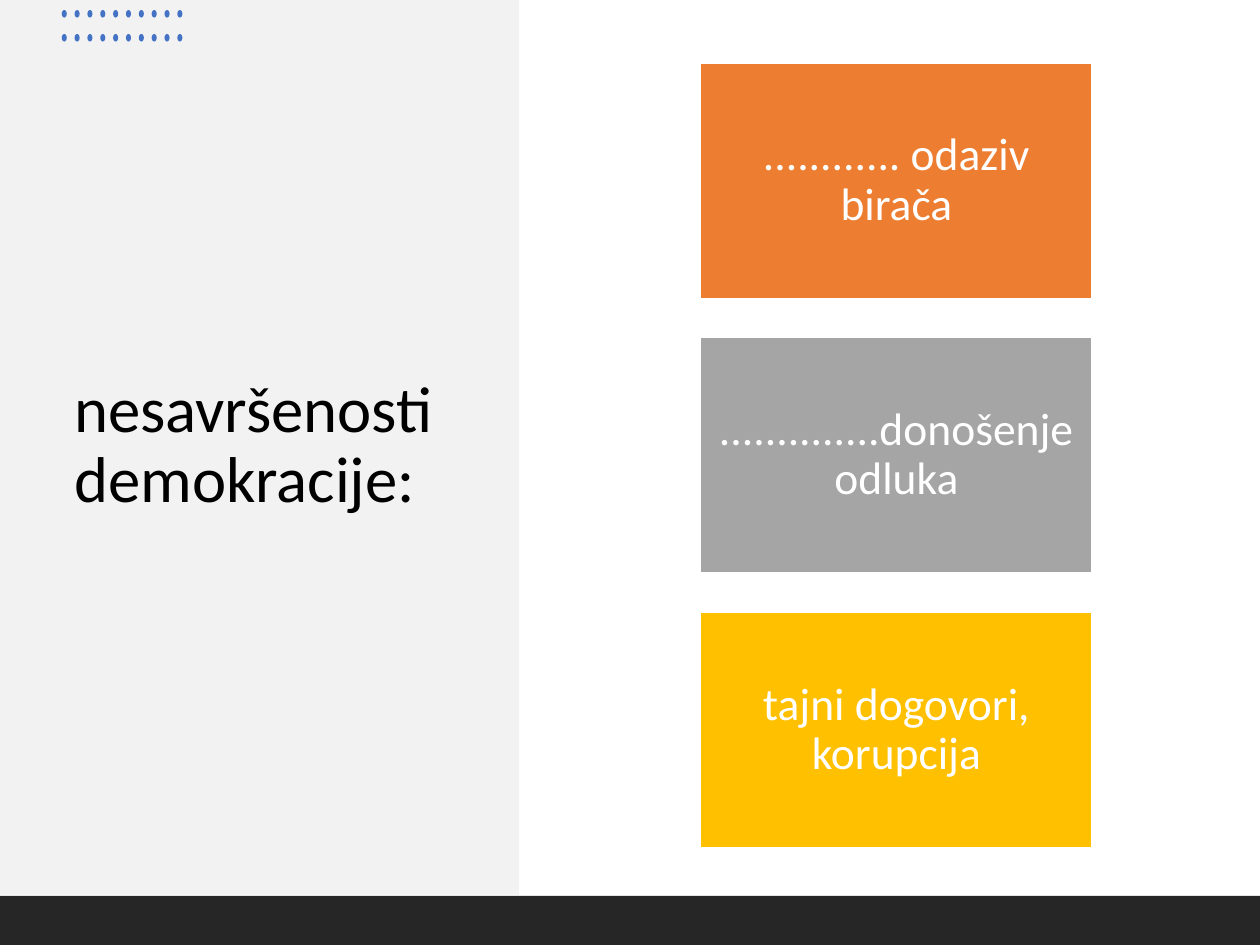
from pptx import Presentation
from pptx.dml.color import RGBColor
from pptx.enum.shapes import MSO_SHAPE
from pptx.enum.text import MSO_ANCHOR, MSO_AUTO_SIZE, PP_ALIGN
from pptx.util import Inches, Pt

TITLE = "nesavršenosti demokracije:"
CARDS = [
    ("............ odaziv birača", "ED7D31"),
    ("..............donošenje odluka", "A5A5A5"),
    ("tajni dogovori, korupcija", "FFC000"),
]
THEME = {
    "font": "Calibri",
    "title_size": 37,
    "card_size": 26,
    "title_color": "000000",
    "white": "FFFFFF",
    "panel": "F2F2F2",
    "footer": "262626",
    "dot": "4472C4",
}
TITLE_BOX = (0.49, 1.32, 3.18, 4.45)
PANEL_BOX = (0, 0, 4.12, 7.1)
FOOTER_BOX = (0, 7.11, 10, 0.39)
CARD_LEFT, CARD_TOP, CARD_WIDTH, CARD_HEIGHT, CARD_PITCH = 5.56, 0.5, 3.11, 1.87, 2.18
DOT_LEFT, DOT_TOP, DOT_WIDTH, DOT_HEIGHT = 0.49, 0.08, 0.04, 0.06
DOT_COLUMNS, DOT_ROWS = 10, 2
DOT_PITCH_X, DOT_PITCH_Y = 0.102, 0.19


def color(value):
    return RGBColor.from_string(value)


def add_box(shapes, box, fill, kind=MSO_SHAPE.RECTANGLE, line=None):
    shape = shapes.add_shape(kind, *map(Inches, box))
    shape.shadow.inherit = False
    shape.fill.solid()
    shape.fill.fore_color.rgb = color(fill)
    if line:
        shape.line.color.rgb = color(line)
        shape.line.width = Pt(1)
    else:
        shape.line.fill.background()
    return shape


def write_text(shape, text, size, text_color, align, inset=None):
    frame = shape.text_frame
    frame.word_wrap = True
    frame.auto_size = MSO_AUTO_SIZE.NONE
    frame.vertical_anchor = MSO_ANCHOR.MIDDLE
    if inset is not None:
        frame.margin_left = frame.margin_right = Inches(inset)
        frame.margin_top = frame.margin_bottom = Inches(inset)
    paragraph = frame.paragraphs[0]
    paragraph.alignment = align
    paragraph.line_spacing = 0.9
    run = paragraph.add_run()
    run.text = text
    run.font.name = THEME["font"]
    run.font.size = Pt(size)
    run.font.color.rgb = color(text_color)


def add_title(slide):
    title = slide.shapes.title
    title.left, title.top, title.width, title.height = map(Inches, TITLE_BOX)
    write_text(title, TITLE, size=THEME["title_size"],
               text_color=THEME["title_color"], align=PP_ALIGN.LEFT)
    panel = add_box(slide.shapes, PANEL_BOX, THEME["panel"])
    title.element.addprevious(panel.element)


def add_dots(slide):
    group = slide.shapes.add_group_shape()
    for column in range(DOT_COLUMNS):
        for row in range(DOT_ROWS):
            box = (DOT_LEFT + column * DOT_PITCH_X, DOT_TOP + row * DOT_PITCH_Y,
                   DOT_WIDTH, DOT_HEIGHT)
            add_box(group.shapes, box, THEME["dot"], kind=MSO_SHAPE.OVAL)


def add_cards(slide):
    group = slide.shapes.add_group_shape()
    for index, (text, fill) in enumerate(CARDS):
        box = (CARD_LEFT, CARD_TOP + index * CARD_PITCH, CARD_WIDTH, CARD_HEIGHT)
        card = add_box(group.shapes, box, fill, line=THEME["white"])
        write_text(card, text, size=THEME["card_size"], text_color=THEME["white"],
                   align=PP_ALIGN.CENTER, inset=0.11)


def main():
    presentation = Presentation()
    presentation.slide_width = Inches(10)
    presentation.slide_height = Inches(7.5)
    slide = presentation.slides.add_slide(presentation.slide_layouts[5])
    add_title(slide)
    add_dots(slide)
    add_box(slide.shapes, FOOTER_BOX, THEME["footer"])
    add_cards(slide)
    presentation.save("out.pptx")


if __name__ == "__main__":
    main()
